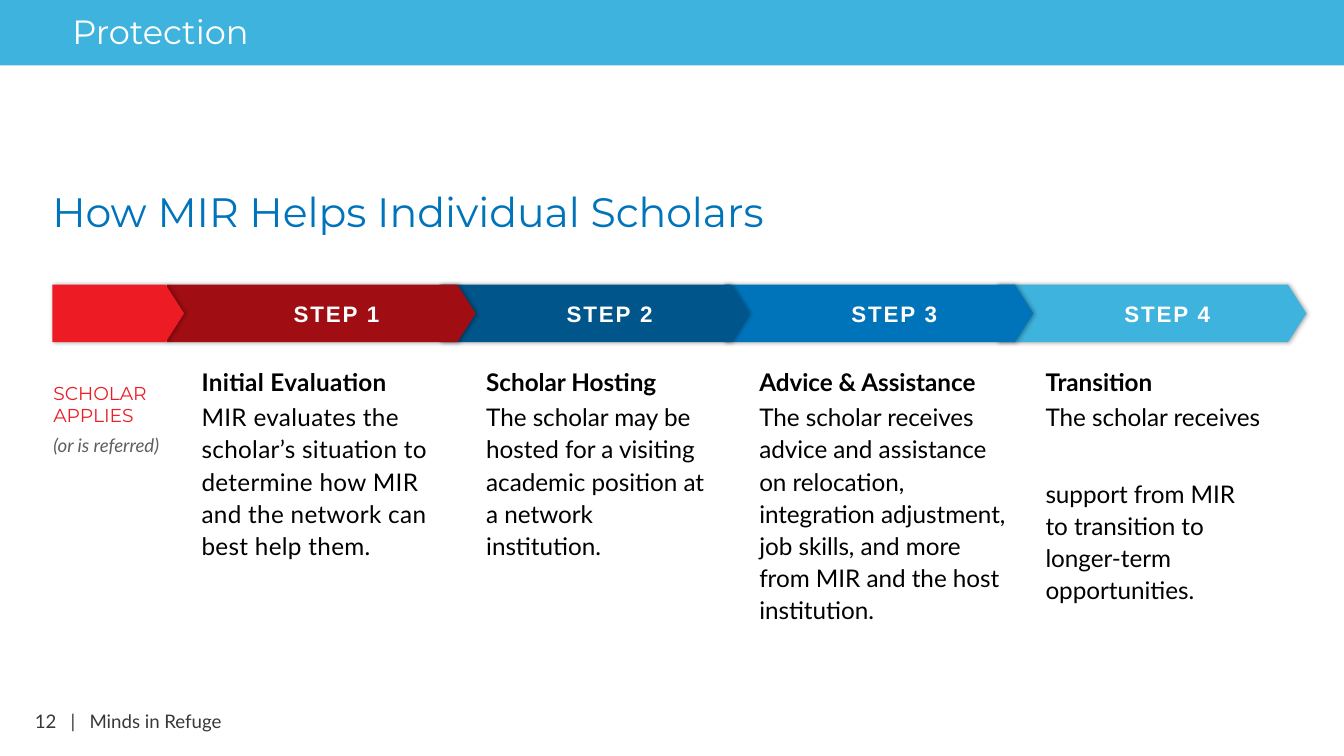
from dataclasses import dataclass

from lxml import etree
from pptx import Presentation
from pptx import util as u
from pptx.dml import color
from pptx.enum import shapes, text
from pptx.oxml import ns


@dataclass(frozen=True)
class Theme:
    """Colours, fonts and type sizes of the slide."""
    sky: str = "3EB3DD"
    blue: str = "0074BB"
    navy: str = "00568B"
    crimson: str = "A00D12"
    red: str = "ED1C24"
    white: str = "FFFFFF"
    black: str = "000000"
    grey: str = "615E5E"
    charcoal: str = "3A3837"
    display: str = "Montserrat"
    body: str = "Lato"
    label: str = "Arial"
    title_size: int = 22
    section_size: int = 18
    body_size: int = 13
    step_size: int = 12
    small_size: int = 10


THEME = Theme()
ARROW_TOP, ARROW_HEIGHT, STEP_WIDTH = 5.38, 1.09, 5.84
STEPS = [
    (3.15, THEME.crimson, 3.61, 4.83, "Initial Evaluation",
     "MIR evaluates the scholar’s situation to determine how MIR and the "
     "network can best help them.", 0.2),
    (8.31, THEME.navy, 8.99, 4.45, "Scholar Hosting",
     "The scholar may be hosted for a visiting academic position at a "
     "network institution.", 0),
    (13.69, THEME.blue, 14.15, 4.95, "Advice & Assistance",
     "The scholar receives advice and assistance on relocation, integration "
     "adjustment, job skills, and more from MIR and the host institution.", 0),
    (18.85, THEME.sky, 19.56, 4.29, "Transition",
     "The scholar receives \vsupport from MIR to transition to longer-term "
     "opportunities.", 0),
]


def style(paragraph, size, font, colour, bold=False, italic=False, spacing=0):
    """Format every run of a paragraph."""
    for run in paragraph.runs:
        run.font.size = u.Pt(size)
        run.font.name = font
        run.font.bold = bold
        run.font.italic = italic
        run.font.color.rgb = color.RGBColor.from_string(colour)
        if spacing:
            run.font._element.set("spc", str(round(spacing * 100)))


def lay_out(paragraph, after, line_spacing=None):
    """Indent a paragraph and set its spacing."""
    paragraph._p.get_or_add_pPr().set("marL", str(u.Cm(0.2)))
    paragraph.space_after = u.Pt(after)
    paragraph.line_spacing = line_spacing


def clear_margins(frame):
    """Remove the inner margins of a text frame and let it wrap."""
    frame.margin_left = frame.margin_top = 0
    frame.margin_right = frame.margin_bottom = 0
    frame.word_wrap = True


def add_text(slide, left, top, width, height, *lines):
    """Add a text box with one paragraph per line and return its paragraphs."""
    box = slide.shapes.add_textbox(u.Cm(left), u.Cm(top), u.Cm(width), u.Cm(height))
    clear_margins(box.text_frame)
    paragraphs = [box.text_frame.paragraphs[0]]
    paragraphs += [box.text_frame.add_paragraph() for _ in lines[1:]]
    for paragraph, line in zip(paragraphs, lines):
        paragraph.text = line
    return paragraphs


def add_filled(slide, preset, left, top, width, height, fill):
    """Add a plain shape without outline or inherited shadow."""
    shape = slide.shapes.add_shape(
        preset, u.Cm(left), u.Cm(top), u.Cm(width), u.Cm(height))
    shape.shadow.inherit = False
    shape.fill.solid()
    shape.fill.fore_color.rgb = color.RGBColor.from_string(fill)
    shape.line.fill.background()
    return shape


def add_arrow(slide, left, width, fill, label=""):
    """Add a softly shadowed pentagon arrow with an optional label."""
    arrow = add_filled(slide, shapes.MSO_SHAPE.PENTAGON, left, ARROW_TOP,
                       width, ARROW_HEIGHT, fill)
    arrow.adjustments[0] = 0.32
    effects = arrow._element.spPr.find(ns.qn("a:effectLst"))
    shadow = etree.SubElement(effects, ns.qn("a:outerShdw"), blurRad=str(u.Pt(2.2)),
                              dist=str(u.Pt(0.8)), dir="0", rotWithShape="0")
    tint = etree.SubElement(shadow, ns.qn("a:srgbClr"), val=THEME.black)
    etree.SubElement(tint, ns.qn("a:alpha"), val="33000")
    if label:
        frame = arrow.text_frame
        clear_margins(frame)
        frame.margin_left = u.Cm(0.76)
        frame.vertical_anchor = text.MSO_ANCHOR.MIDDLE
        frame.text = label
        frame.paragraphs[0].alignment = text.PP_ALIGN.CENTER
        style(frame.paragraphs[0], THEME.step_size, THEME.label, THEME.white,
              bold=True, spacing=1)


def add_title(slide, wording):
    """Place and format the title placeholder."""
    title = slide.shapes.title
    title.left, title.top = u.Cm(0.99), u.Cm(3.53)
    title.width, title.height = u.Cm(22.86), u.Cm(0.94)
    frame = title.text_frame
    clear_margins(frame)
    frame.auto_size = text.MSO_AUTO_SIZE.NONE
    frame.vertical_anchor = text.MSO_ANCHOR.TOP
    frame.text = wording
    frame.paragraphs[0].alignment = text.PP_ALIGN.LEFT
    style(frame.paragraphs[0], THEME.title_size, THEME.display, THEME.blue)


def add_page_frame(slide):
    """Add the section band and the footer."""
    add_filled(slide, shapes.MSO_SHAPE.RECTANGLE, 0, -0.08, 25.4, 1.32, THEME.sky)
    section, = add_text(slide, 1.37, 0.2, 5.05, 0.69, "Protection")
    style(section, THEME.section_size, THEME.display, THEME.white)
    footer, = add_text(slide, 0.66, 13.41, 5.89, 0.43, "12   |   Minds in Refuge")
    style(footer, THEME.small_size, THEME.body, THEME.charcoal)


def add_step_text(slide, left, width, heading, detail, spacing):
    """Add the heading and explanation of one step."""
    paragraphs = add_text(slide, left, 6.88, width, 4.2, heading, detail)
    for paragraph, bold in zip(paragraphs, (True, False)):
        lay_out(paragraph, 2, 1.1)
        style(paragraph, THEME.body_size, THEME.body, THEME.black, bold,
              spacing=spacing)


def add_application(slide):
    """Add the starting point of the process."""
    applies, referred = add_text(slide, 0.81, 7.21, 2.9, 1.78,
                                 "SCHOLAR APPLIES", "(or is referred)")
    lay_out(applies, 3)
    style(applies, THEME.small_size, THEME.display, THEME.red)
    lay_out(referred, 7, 1.1)
    style(referred, THEME.small_size, THEME.body, THEME.grey, italic=True)
    add_arrow(slide, 0.99, 2.49, THEME.red)


def main():
    """Build and save the slide."""
    deck = Presentation()
    deck.slide_width, deck.slide_height = u.Cm(25.4), u.Cm(14.29)
    slide = deck.slides.add_slide(deck.slide_layouts[5])
    add_page_frame(slide)
    add_title(slide, "How MIR Helps Individual Scholars")
    for _, _, left, width, heading, detail, spacing in STEPS:
        add_step_text(slide, left, width, heading, detail, spacing)
    for number, (left, fill, *_) in reversed(list(enumerate(STEPS, 1))):
        add_arrow(slide, left, STEP_WIDTH, fill, f"STEP {number}")
    add_application(slide)
    deck.save("out.pptx")


if __name__ == "__main__":
    main()
